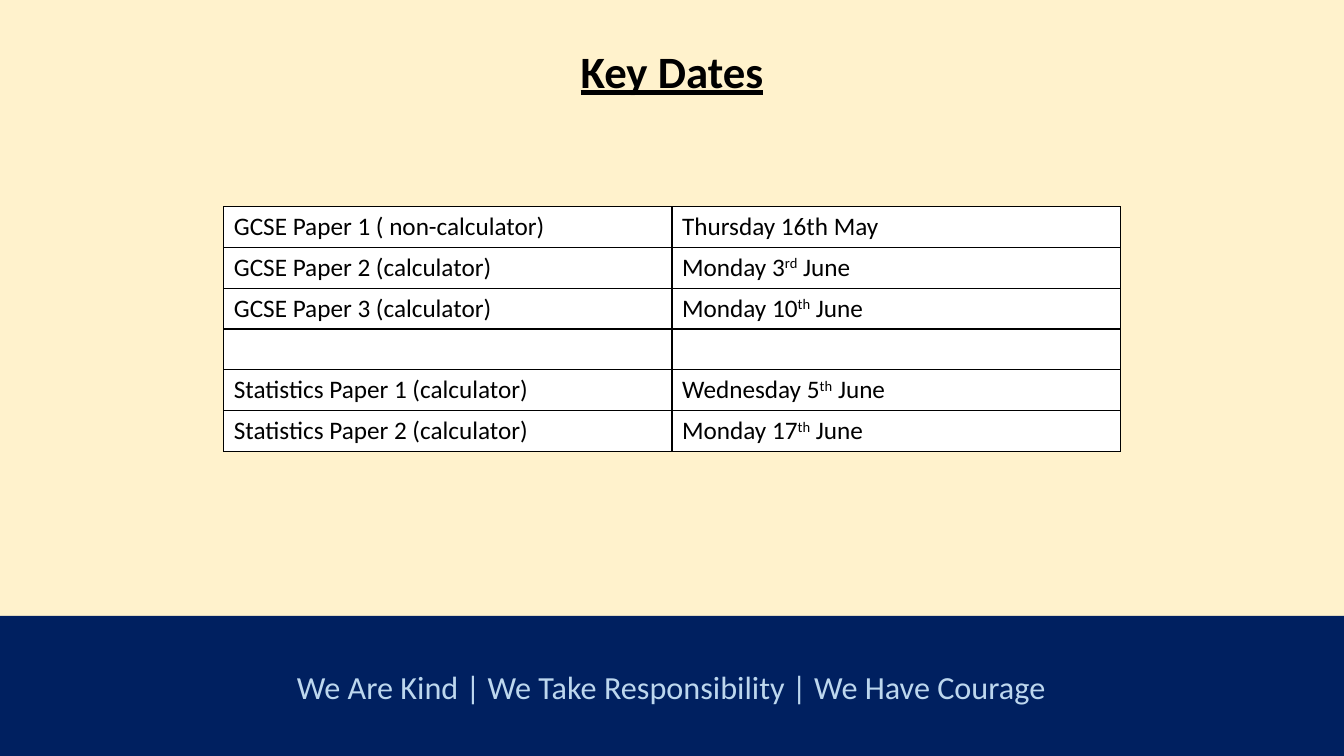
from lxml import etree
from pptx import Presentation
from pptx.dml.color import RGBColor
from pptx.enum.shapes import MSO_SHAPE
from pptx.enum.text import MSO_ANCHOR, PP_ALIGN
from pptx.oxml import parse_xml
from pptx.oxml.ns import nsdecls
from pptx.util import Inches, Pt

RECTANGLE = MSO_SHAPE.RECTANGLE
CENTER = PP_ALIGN.CENTER
TOP, MIDDLE = MSO_ANCHOR.TOP, MSO_ANCHOR.MIDDLE

FONT = "Calibri"
COLORS = {
    "cream": "FFF2CC",
    "navy": "002060",
    "pale_blue": "BDD7EE",
    "mid_blue": "9DC3E6",
    "black": "000000",
    "white": "FFFFFF",
}

# Each date is split into plain text, raised ordinal ending and plain text.
EXAM_DATES = [
    ("GCSE Paper 1 ( non-calculator)", ["Thursday 16th May"]),
    ("GCSE Paper 2 (calculator)", ["Monday 3", "rd", " June"]),
    ("GCSE Paper 3 (calculator)", ["Monday 10", "th", " June"]),
    ("", []),
    ("Statistics Paper 1 (calculator)", ["Wednesday 5", "th", " June"]),
    ("Statistics Paper 2 (calculator)", ["Monday 17", "th", " June"]),
]


def rgb(name):
    return RGBColor.from_string(COLORS[name])


def line_xml(tag, color, points):
    return parse_xml(
        f'<a:{tag} {nsdecls("a")} w="{Pt(points)}"><a:solidFill>'
        f'<a:srgbClr val="{COLORS[color]}"/></a:solidFill></a:{tag}>'
    )


def style_font(font, size, color):
    font.name = FONT
    font.size = Pt(size)
    font.color.rgb = rgb(color)


def write_centered_line(frame, text, size, color, anchor):
    frame.word_wrap = True
    frame.vertical_anchor = anchor
    frame.text = text
    paragraph = frame.paragraphs[0]
    paragraph.alignment = CENTER
    paragraph.line_spacing = 0.9
    run = paragraph.runs[0]
    style_font(run.font, size, color)
    return run


def add_footer(slide, slide_width):
    band = slide.shapes.add_shape(
        RECTANGLE, 0, Inches(6.11), slide_width, Inches(1.39))
    band.shadow.inherit = False
    band.fill.solid()
    band.fill.fore_color.rgb = rgb("navy")
    band.line.fill.background()
    band.text_frame.margin_top = Inches(0.12)
    motto = write_centered_line(
        band.text_frame,
        "We Are Kind | We Take Responsibility | We Have Courage",
        23, "pale_blue", MIDDLE)
    motto.font._element.insert(0, line_xml("ln", "mid_blue", 0.75))


def add_title(slide):
    box = slide.shapes.add_textbox(
        Inches(3.16), Inches(0.44), Inches(7.01), Inches(0.96))
    title = write_centered_line(box.text_frame, "Key Dates", 32, "black", TOP)
    title.font.bold = True
    title.font.underline = True


def fill_cell(cell, parts):
    """Write the parts as runs, raising every second one."""
    properties = cell._tc.get_or_add_tcPr()
    for side in "LRTB":
        properties.append(line_xml(f"ln{side}", "black", 1))
    cell.fill.solid()
    cell.fill.fore_color.rgb = rgb("white")
    paragraph = cell.text_frame.paragraphs[0]
    for index, part in enumerate(parts):
        run = paragraph.add_run()
        run.text = part
        style_font(run.font, 18, "black")
        if index % 2:
            run.font._element.set("baseline", "30000")


def add_exam_table(slide):
    table = slide.shapes.add_table(
        len(EXAM_DATES), 2,
        Inches(2.22), Inches(2.05), Inches(8.89), Inches(2.43)).table
    table.first_row = False
    table.horz_banding = False
    for row, (paper, date_parts) in enumerate(EXAM_DATES):
        fill_cell(table.cell(row, 0), [paper] if paper else [])
        fill_cell(table.cell(row, 1), date_parts)


def main():
    deck = Presentation()
    deck.slide_width, deck.slide_height = Inches(13.33), Inches(7.5)
    slide = deck.slides.add_slide(deck.slide_layouts[6])
    slide.background.fill.solid()
    slide.background.fill.fore_color.rgb = rgb("cream")
    add_footer(slide, deck.slide_width)
    add_title(slide)
    add_exam_table(slide)
    deck.save("out.pptx")


if __name__ == "__main__":
    main()
